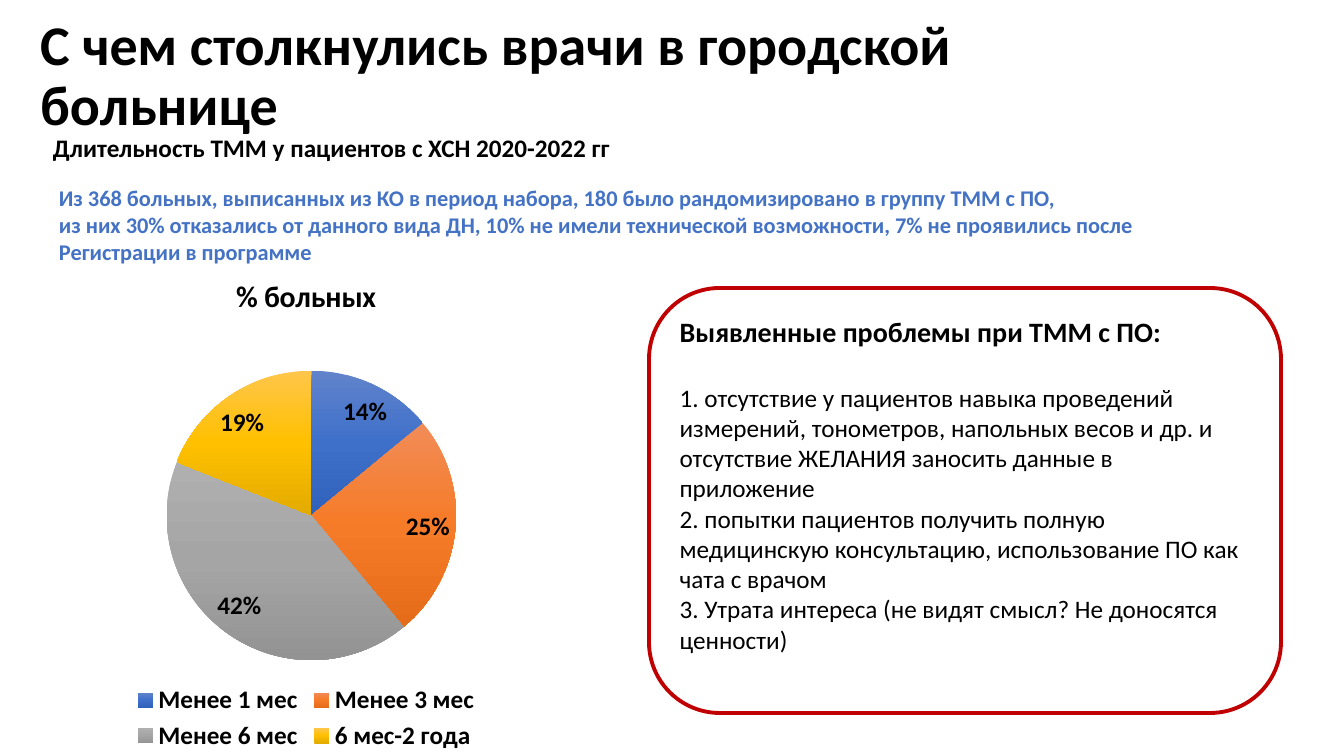
from lxml import etree
from pptx import Presentation
from pptx.chart.data import CategoryChartData
from pptx.dml.color import RGBColor
from pptx.enum.chart import XL_CHART_TYPE, XL_LABEL_POSITION, XL_LEGEND_POSITION
from pptx.enum.shapes import MSO_SHAPE
from pptx.enum.text import MSO_ANCHOR, PP_ALIGN
from pptx.oxml.ns import qn
from pptx.util import Pt

SCALE = 12192000 / 1344
FONT = "Calibri"
COLORS = {"black": "000000", "white": "FFFFFF", "blue": "4472C4", "red": "C00000"}
SLICES = [
    ("Менее 1 мес", 14, ("6183CB", "3E70CA", "3062BB")),
    ("Менее 3 мес", 25, ("F18C57", "F67B28", "E56C19")),
    ("Менее 6 мес", 42, ("AFAFAF", "A5A5A5", "939393")),
    ("6 мес-2 года", 19, ("FFC64B", "FFC000", "E3AB00")),
]


def px(*lengths):
    return [round(length * SCALE) for length in lengths]


def set_font(font, size, color="black", bold=True):
    font.name, font.size, font.bold = FONT, Pt(size), bold
    font.color.rgb = RGBColor.from_string(COLORS[color])


presentation = Presentation()
presentation.slide_width, presentation.slide_height = px(1344, 756)
slide = presentation.slides.add_slide(presentation.slide_layouts[5])

# Title
title = slide.shapes.title
title.left, title.top, title.width, title.height = px(30, 20, 1159, 115)
title.text_frame.text = "С чем столкнулись врачи в городской больнице"
title.text_frame.vertical_anchor = MSO_ANCHOR.MIDDLE
paragraph = title.text_frame.paragraphs[0]
paragraph.alignment = PP_ALIGN.LEFT
paragraph.line_spacing = 0.9
set_font(paragraph.font, 40)

# Pie chart
chart_data = CategoryChartData()
chart_data.categories = [name for name, _, _ in SLICES]
chart_data.add_series("% больных", [value for _, value, _ in SLICES])
chart = slide.shapes.add_chart(
    XL_CHART_TYPE.PIE, *px(38, 255, 536, 501), chart_data).chart
set_font(chart.font, 10, bold=False)
chart.has_title = True
chart.chart_title.text_frame.text = "% больных"
set_font(chart.chart_title.text_frame.paragraphs[0].font, 21.3)
chart.has_legend = True
chart.legend.position = XL_LEGEND_POSITION.BOTTOM
chart.legend.include_in_layout = False
set_font(chart.legend.font, 18)

plot = chart.plots[0]
plot.vary_by_categories = True
plot.has_data_labels = True
labels = plot.data_labels
labels.show_percentage, labels.show_value = True, False
labels.number_format, labels.number_format_is_linked = "0%", False
labels.position = XL_LABEL_POSITION.BEST_FIT
set_font(labels.font, 18)

# Slice gradients, running from top to bottom
for index, (_, _, shades) in enumerate(SLICES):
    fill = plot.series[0].points[index].format.fill
    fill.gradient()
    fill.gradient_angle = 270
    stops = fill.gradient_stops._gsLst
    for stop in list(stops):
        stops.remove(stop)
    for position, shade in zip((0, 50000, 100000), shades):
        stop = etree.SubElement(stops, qn("a:gs"), pos=str(position))
        etree.SubElement(stop, qn("a:srgbClr"), val=shade)

# Fixed place of the pie inside the chart
plot_area = chart._chartSpace.chart.plotArea
for layout in plot_area.findall(qn("c:layout")):
    plot_area.remove(layout)
layout = etree.Element(qn("c:layout"))
plot_area.insert(0, layout)
manual = etree.SubElement(layout, qn("c:manualLayout"))
for tag, value in (("layoutTarget", "inner"), ("xMode", "edge"), ("yMode", "edge"),
                   ("x", "0.24"), ("y", "0.23"), ("w", "0.54"), ("h", "0.58")):
    etree.SubElement(manual, qn(f"c:{tag}"), val=value)

# Subtitle and note on the sample
for box, size, color, lines in (
    ((43, 127, 583, 40), 18, "black",
     ["Длительность ТММ у пациентов с ХСН 2020-2022 гг"]),
    ((49, 179, 1108, 95), 16, "blue",
     ["Из 368 больных, выписанных из КО в период набора, 180 было рандомизировано в группу ТММ с ПО,",
      "из них 30% отказались от данного вида ДН, 10% не имели технической возможности, 7% не проявились после",
      "Регистрации в программе"]),
):
    text_frame = slide.shapes.add_textbox(*px(*box)).text_frame
    text_frame.word_wrap = False
    text_frame.text = "\n".join(lines)
    for paragraph in text_frame.paragraphs:
        set_font(paragraph.font, size, color)

# Panel of problems
panel = slide.shapes.add_shape(MSO_SHAPE.ROUNDED_RECTANGLE, *px(649, 288, 632, 425))
panel.shadow.inherit = False
panel.fill.solid()
panel.fill.fore_color.rgb = RGBColor.from_string(COLORS["white"])
panel.line.color.rgb = RGBColor.from_string(COLORS["red"])
panel.line.width = Pt(2.75)
text_frame = panel.text_frame
text_frame.word_wrap = True
text_frame.vertical_anchor = MSO_ANCHOR.TOP
text_frame.margin_top = px(6)[0]
text_frame.text = "\n".join([
    "Выявленные проблемы при ТММ с ПО:",
    "1. отсутствие у пациентов навыка проведений измерений, тонометров, напольных весов и др. и отсутствие ЖЕЛАНИЯ заносить данные в приложение",
    "2. попытки пациентов получить полную медицинскую консультацию, использование ПО как чата с врачом",
    "3. Утрата интереса (не видят смысл? Не доносятся ценности)",
])
for paragraph in text_frame.paragraphs:
    paragraph.alignment = PP_ALIGN.LEFT
    set_font(paragraph.font, 18, bold=False)
heading = text_frame.paragraphs[0]
set_font(heading.font, 20)
heading.space_after = Pt(24)

presentation.save("out.pptx")
